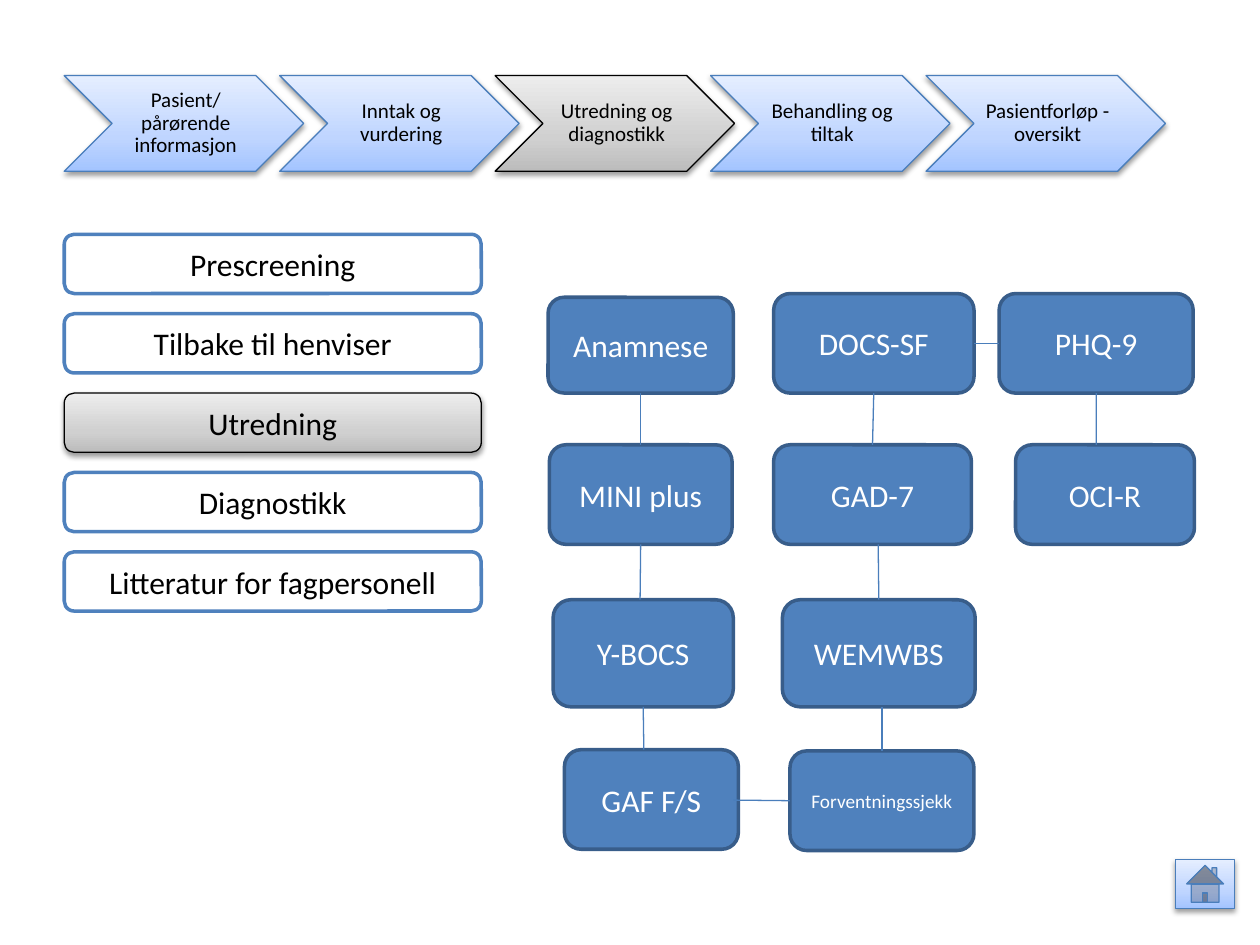
from dataclasses import dataclass

from pptx import Presentation
from pptx import util as u
from pptx.dml.color import RGBColor
from pptx.enum import shapes, text
from pptx.oxml import parse_xml
from pptx.oxml.ns import nsdecls, qn

TOP, LEFT, BOTTOM, RIGHT = 0, 1, 2, 3


@dataclass(frozen=True)
class Theme:
    font: str = "Calibri"
    white: str = "FFFFFF"
    black: str = "000000"
    box_fill: str = "4F81BD"
    box_line: str = "385D8A"
    thin_line: str = "4A7EBB"
    blue_gradient: tuple = ((0, "A3C4FF"), (35, "BFD5FF"), (100, "E5EEFF"))
    gray_gradient: tuple = ((0, "BCBCBC"), (35, "D0D0D0"), (100, "EDEDED"))
    label_size: int = 18
    step_size: int = 12
    small_size: int = 11
    thin: float = 0.75
    thick: float = 2


THEME = Theme()

STEPS = ["Pasient/ pårørende informasjon", "Inntak og vurdering",
         "Utredning og diagnostikk", "Behandling og tiltak",
         "Pasientforløp - oversikt"]
CURRENT_STEP = "Utredning og diagnostikk"

MENU = ["Prescreening", "Tilbake til henviser", "Utredning", "Diagnostikk",
        "Litteratur for fagpersonell"]
CURRENT_MENU = "Utredning"

# Assessment tools: left, top, width, height
TOOLS = {
    "Anamnese": (4.35, 2.36, 1.47, 0.76),
    "MINI plus": (4.36, 3.53, 1.45, 0.79),
    "Y-BOCS": (4.39, 4.76, 1.43, 0.85),
    "GAF F/S": (4.48, 5.95, 1.38, 0.79),
    "DOCS-SF": (6.14, 2.33, 1.59, 0.79),
    "GAD-7": (6.14, 3.53, 1.57, 0.79),
    "WEMWBS": (6.21, 4.76, 1.53, 0.85),
    "Forventningssjekk": (6.27, 5.96, 1.46, 0.79),
    "PHQ-9": (7.93, 2.33, 1.54, 0.79),
    "OCI-R": (8.06, 3.53, 1.42, 0.79),
}

# Links: start point, end point, joined start side, joined end side
LINKS = [
    ((5.08, 3.12), (5.08, 3.53), ("Anamnese", BOTTOM), ("MINI plus", TOP)),
    ((5.08, 4.32), (5.08, 4.76), ("MINI plus", BOTTOM), None),
    ((5.11, 5.61), (5.11, 5.95), ("Y-BOCS", BOTTOM), None),
    ((5.82, 6.35), (6.27, 6.35), None, ("Forventningssjekk", LEFT)),
    ((7, 5.95), (7, 5.61), ("Forventningssjekk", TOP), None),
    ((6.97, 4.76), (6.97, 4.32), ("WEMWBS", TOP), None),
    ((6.93, 3.53), (6.93, 3.12), ("GAD-7", TOP), ("DOCS-SF", BOTTOM)),
    ((7.73, 2.73), (7.93, 2.73), ("DOCS-SF", RIGHT), ("PHQ-9", LEFT)),
    ((8.7, 3.12), (8.7, 3.53), ("PHQ-9", BOTTOM), None),
]


def set_gradient(shape, stops):
    shape.fill.gradient()
    shape.fill.gradient_angle = 90
    stop_xml = "".join(
        f'<a:gs pos="{position * 1000}"><a:srgbClr val="{color}"/></a:gs>'
        for position, color in stops)
    gradient = shape._element.spPr.find(qn("a:gradFill"))
    gradient.replace(
        gradient.find(qn("a:gsLst")),
        parse_xml(f'<a:gsLst {nsdecls("a")}>{stop_xml}</a:gsLst>'))


def add_shadow(shape):
    shape._element.spPr.find(qn("a:effectLst")).append(parse_xml(
        f'<a:outerShdw {nsdecls("a")} blurRad="{u.Pt(3.1)}" '
        f'dist="{u.Pt(1.6)}" dir="5400000" rotWithShape="0">'
        f'<a:srgbClr val="{THEME.black}"><a:alpha val="38000"/></a:srgbClr>'
        '</a:outerShdw>'))


def set_line(line, color, width):
    line.color.rgb = RGBColor.from_string(color)
    line.width = u.Pt(width)


def add_flat_shape(slide, kind, box, fill, line):
    """Plain fill with a thick outline."""
    shape = slide.shapes.add_shape(kind, *map(u.Inches, box))
    shape.shadow.inherit = False
    shape.fill.solid()
    shape.fill.fore_color.rgb = RGBColor.from_string(fill)
    set_line(shape.line, line, THEME.thick)
    return shape


def add_raised_shape(slide, kind, box, current=False):
    """Gradient fill with a thin outline and a soft shadow."""
    shape = slide.shapes.add_shape(kind, *map(u.Inches, box))
    shape.shadow.inherit = False
    set_gradient(shape, THEME.gray_gradient if current else THEME.blue_gradient)
    set_line(shape.line, THEME.black if current else THEME.thin_line, THEME.thin)
    add_shadow(shape)
    return shape


def write_text(shape, words, size=THEME.label_size, color=THEME.black,
               spacing=None, insets=(0.1, 0.05, 0.1, 0.05)):
    frame = shape.text_frame
    frame.word_wrap = True
    frame.vertical_anchor = text.MSO_ANCHOR.MIDDLE
    (frame.margin_left, frame.margin_top,
     frame.margin_right, frame.margin_bottom) = map(u.Inches, insets)
    paragraph = frame.paragraphs[0]
    paragraph.alignment = text.PP_ALIGN.CENTER
    paragraph.line_spacing = spacing
    run = paragraph.add_run()
    run.text = words
    run.font.name = THEME.font
    run.font.size = u.Pt(size)
    run.font.color.rgb = RGBColor.from_string(color)


def add_link(slide, start, end, begin_join, end_join, tools):
    link = slide.shapes.add_connector(
        shapes.MSO_CONNECTOR.STRAIGHT, *map(u.Inches, start + end))
    set_line(link.line, THEME.thin_line, THEME.thin)
    link._element.spPr.append(parse_xml(f'<a:effectLst {nsdecls("a")}/>'))
    if begin_join:
        name, side = begin_join
        link.begin_connect(tools[name], side)
    if end_join:
        name, side = end_join
        link.end_connect(tools[name], side)


def add_steps(slide):
    for index, words in enumerate(STEPS):
        chevron = add_raised_shape(
            slide, shapes.MSO_SHAPE.CHEVRON,
            (0.51 + 1.71 * index, 0.6, 1.9, 0.76), words == CURRENT_STEP)
        write_text(chevron, words, size=THEME.step_size, spacing=0.9,
                   insets=(0.05, 0.02, 0.02, 0.02))


def add_tools(slide):
    tools = {}
    for name, box in TOOLS.items():
        tools[name] = add_flat_shape(
            slide, shapes.MSO_SHAPE.ROUNDED_RECTANGLE, box,
            THEME.box_fill, THEME.box_line)
        size = THEME.small_size if len(name) > 10 else THEME.label_size
        write_text(tools[name], name, size=size, color=THEME.white)
    for link in LINKS:
        add_link(slide, *link, tools)


def add_menu(slide):
    kind = shapes.MSO_SHAPE.ROUNDED_RECTANGLE
    for index, words in enumerate(MENU):
        box = (0.51, 1.86 + 0.63 * index, 3.31, 0.47)
        if words == CURRENT_MENU:
            item = add_raised_shape(slide, kind, box, current=True)
        else:
            item = add_flat_shape(slide, kind, box, THEME.white, THEME.box_fill)
        write_text(item, words)


def main():
    presentation = Presentation()
    presentation.slide_width = u.Inches(10)
    presentation.slide_height = u.Inches(7.5)
    slide = presentation.slides.add_slide(presentation.slide_layouts[6])

    # Home button
    add_raised_shape(slide, shapes.MSO_SHAPE.ACTION_BUTTON_HOME,
                     (9.33, 6.82, 0.47, 0.39))
    # Care pathway along the top
    add_steps(slide)
    # Linked assessment tools
    add_tools(slide)
    # Menu on the left
    add_menu(slide)

    presentation.save("out.pptx")


if __name__ == "__main__":
    main()
